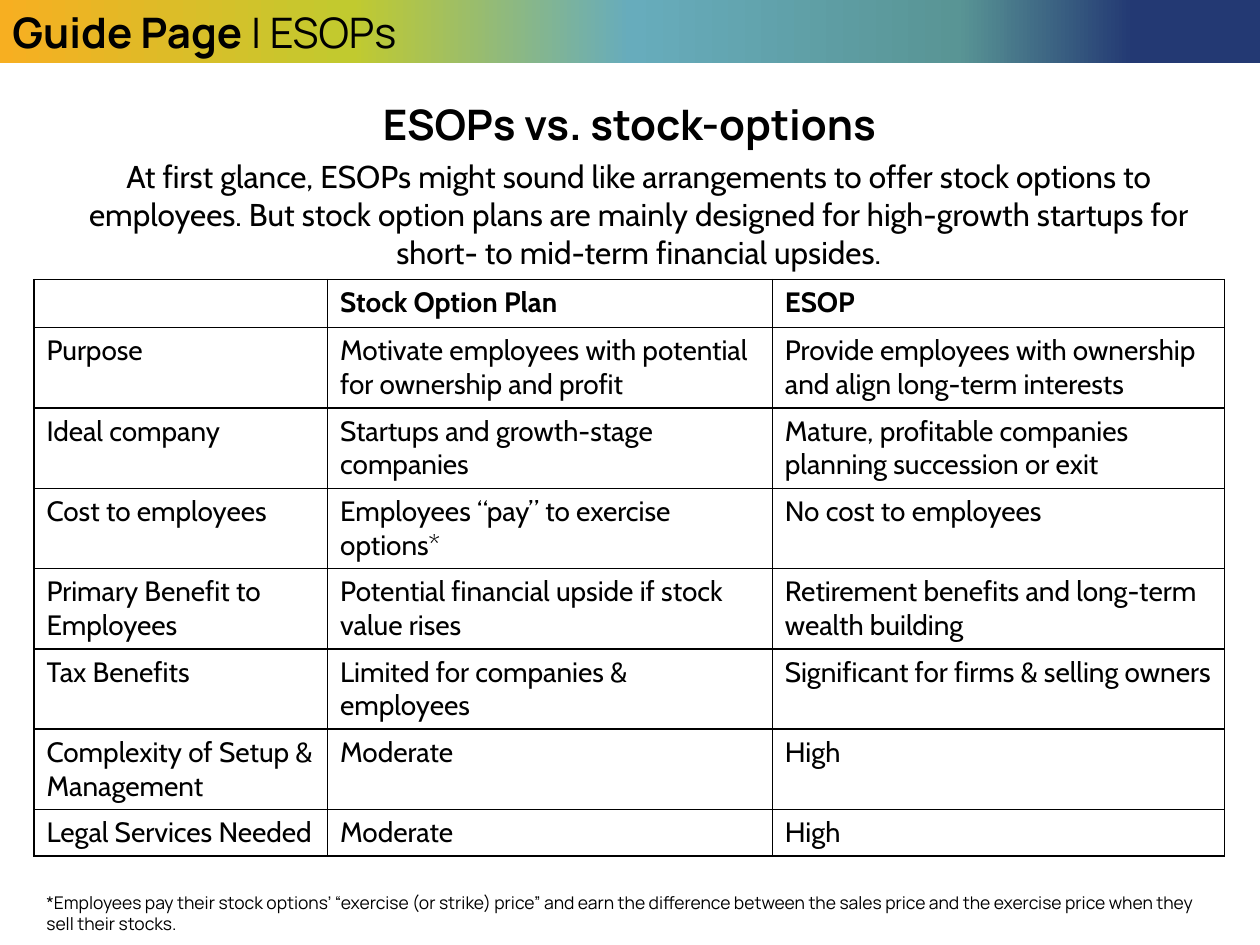
"""Build a slide that compares ESOPs with stock option plans."""
from copy import deepcopy
from dataclasses import dataclass

from lxml import etree
from pptx import Presentation
from pptx.dml.color import RGBColor
from pptx.enum.shapes import MSO_SHAPE
from pptx.enum.text import MSO_ANCHOR, PP_ALIGN
from pptx.oxml.ns import qn
from pptx.util import Inches, Pt

RECT = MSO_SHAPE.RECTANGLE
MIDDLE = MSO_ANCHOR.MIDDLE
LEFT, CENTER = PP_ALIGN.LEFT, PP_ALIGN.CENTER
BLACK = RGBColor(0x00, 0x00, 0x00)
ORANGE = RGBColor(0xF7, 0xAF, 0x21)
LIME = RGBColor(0xC1, 0xCA, 0x2F)
SKY = RGBColor(0x67, 0xAC, 0xBC)
TEAL = RGBColor(0x59, 0x95, 0x95)
NAVY = RGBColor(0x23, 0x39, 0x73)
STOPS = [(0, ORANGE), (0.28, LIME), (0.5, SKY), (0.76, TEAL), (0.9, NAVY)]

HEAD = {"name": "Manrope", "size": Pt(24), "bold": True}
LIGHT = HEAD | {"bold": False}
LEAD = {"name": "Cabin", "size": Pt(18), "bold": False}
CELL = LEAD | {"size": Pt(16)}
TOP = CELL | {"bold": True}
NOTE = LIGHT | {"size": Pt(10)}


@dataclass
class Label:
    left: float
    top: float
    width: float
    height: float
    text: str
    form: dict
    align: PP_ALIGN


LABELS = [
    Label(0.2, 0.73, 9.59, 0.5, "ESOPs vs. stock-options", HEAD, CENTER),
    Label(0.34, 1.2, 9.46, 1.01,
          "At first glance, ESOPs might sound like arrangements to offer stock "
          "options to employees. But stock option plans are mainly designed for "
          "high-growth startups for short- to mid-term financial upsides.",
          LEAD, CENTER),
    Label(0.27, 7.03, 9.46, 0.44,
          "*Employees pay their stock options’ “exercise (or strike) price” and "
          "earn the difference between the sales price and the exercise price "
          "when they sell their stocks.", NOTE, LEFT),
]
COLS = [2.33, 3.53, 3.59]
ROWS = [0.37] + [0.63] * 6 + [0.37]
GRID = [
    ("", "Stock Option Plan", "ESOP"),
    ("Purpose", "Motivate employees with potential for ownership and profit",
     "Provide employees with ownership and align long-term interests"),
    ("Ideal company", "Startups and growth-stage companies",
     "Mature, profitable companies planning succession or exit"),
    ("Cost to employees", "Employees “pay” to exercise options*",
     "No cost to employees"),
    ("Primary Benefit to Employees",
     "Potential financial upside if stock value rises",
     "Retirement benefits and long-term wealth building"),
    ("Tax Benefits", "Limited for companies & employees",
     "Significant for firms & selling owners"),
    ("Complexity of Setup & Management", "Moderate", "High"),
    ("Legal Services Needed", "Moderate", "High"),
]


def write(para, text: str, form: dict) -> None:
    run = para.add_run()
    run.text = text
    for key, value in form.items():
        setattr(run.font, key, value)
    run.font.color.rgb = BLACK


def draw_label(slide, label: Label) -> None:
    box = slide.shapes.add_textbox(Inches(label.left), Inches(label.top),
                                   Inches(label.width), Inches(label.height))
    box.text_frame.word_wrap = True
    para = box.text_frame.paragraphs[0]
    para.alignment = label.align
    write(para, label.text, label.form)


def draw_banner(slide) -> None:
    bar = slide.shapes.add_shape(RECT, 0, 0, Inches(10), Inches(0.5))
    bar.shadow.inherit = False
    bar.line.fill.background()
    bar.fill.gradient()
    bar.fill.gradient_angle = 0
    stops = bar.fill._fill._gradFill.find(qn("a:gsLst"))
    while len(stops) < len(STOPS):
        stops.append(deepcopy(stops[0]))
    for stop, (place, color) in zip(bar.fill.gradient_stops, STOPS):
        stop.position = place
        stop.color.rgb = color
    bar.text_frame.vertical_anchor = MIDDLE
    para = bar.text_frame.paragraphs[0]
    para.alignment = LEFT
    write(para, "Guide Page ", HEAD)
    write(para, "| ESOPs", LIGHT)


def edge_cell(cell) -> None:
    props = cell._tc.get_or_add_tcPr()
    for spot, side in enumerate(("a:lnL", "a:lnR", "a:lnT", "a:lnB")):
        line = etree.Element(qn(side), w=str(Pt(1)))
        fill = etree.SubElement(line, qn("a:solidFill"))
        etree.SubElement(fill, qn("a:srgbClr"), val=str(BLACK))
        props.insert(spot, line)


def draw_table(slide) -> None:
    frame = slide.shapes.add_table(len(ROWS), len(COLS), Inches(0.27), Inches(2.22),
                                   Inches(sum(COLS)), Inches(sum(ROWS)))
    table = frame.table
    table.first_row = table.horz_banding = False
    for col, width in zip(table.columns, COLS):
        col.width = Inches(width)
    for row, height in zip(table.rows, ROWS):
        row.height = Inches(height)
    for i, texts in enumerate(GRID):
        for j, text in enumerate(texts):
            cell = table.cell(i, j)
            cell.fill.background()
            edge_cell(cell)
            write(cell.text_frame.paragraphs[0], text, CELL if i else TOP)


def main() -> None:
    deck = Presentation()
    deck.slide_width, deck.slide_height = Inches(10), Inches(7.5)
    slide = deck.slides.add_slide(deck.slide_layouts[6])
    draw_banner(slide)
    draw_table(slide)
    for label in LABELS:
        draw_label(slide, label)
    deck.save("out.pptx")


if __name__ == "__main__":
    main()
